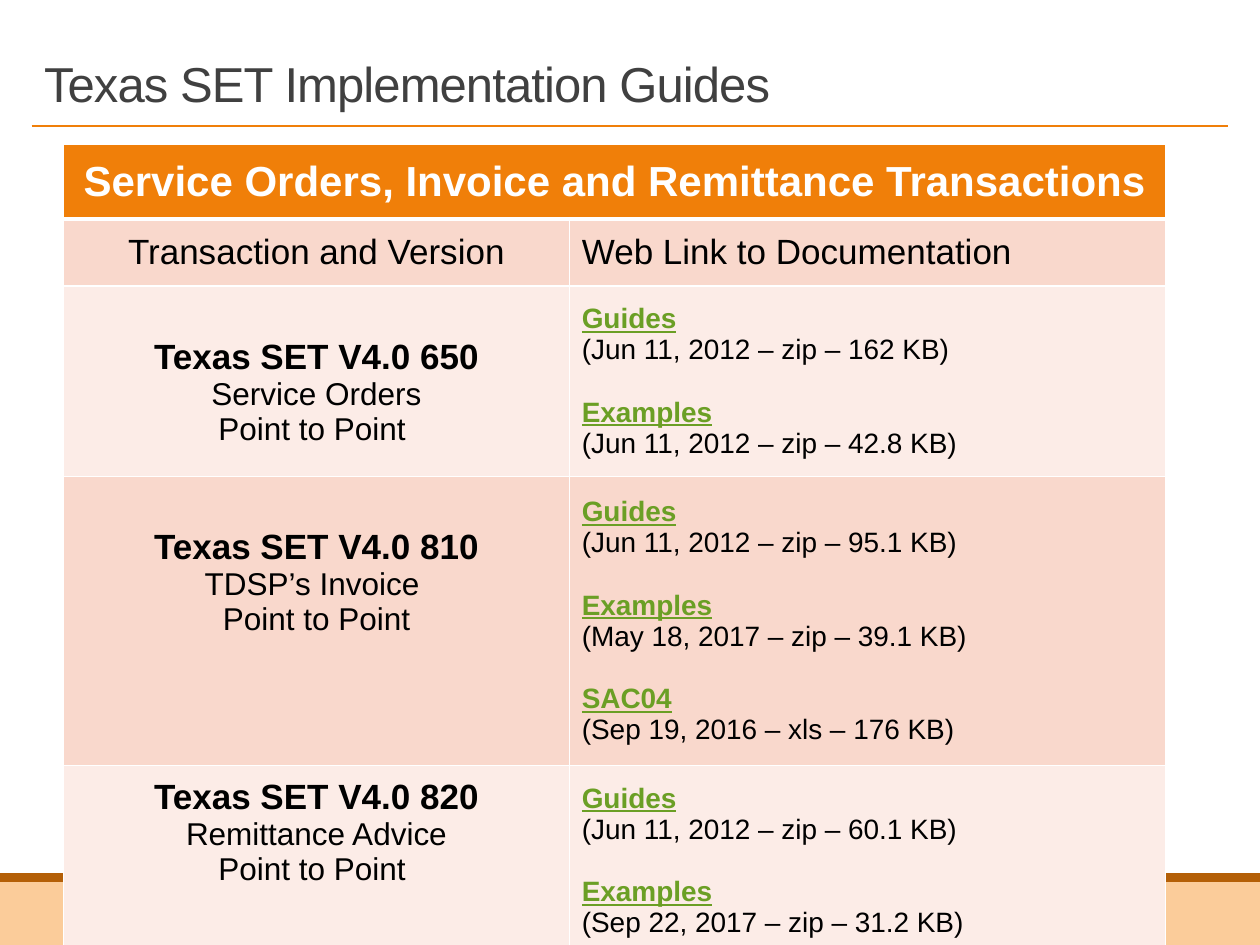
from pptx import Presentation
from pptx.dml.color import RGBColor
from pptx.enum.shapes import MSO_CONNECTOR, MSO_SHAPE
from pptx.enum.text import MSO_ANCHOR, PP_ALIGN
from pptx.oxml.ns import qn
from pptx.util import Cm, Pt
from lxml.etree import SubElement

TITLE = "Texas SET Implementation Guides"
BANNER = "Service Orders, Invoice and Remittance Transactions"
HEADINGS = ("Transaction and Version", "Web Link to Documentation")

# (name, detail lines, top margin in cm, links with their file notes)
GUIDES = [
    ("Texas SET V4.0 650", ("Service Orders", "Point to Point "), 1.04, [
        ("Guides", "(Jun 11, 2012 – zip – 162 KB)"),
        ("Examples", "(Jun 11, 2012 – zip – 42.8 KB)")]),
    ("Texas SET V4.0 810", ("TDSP’s Invoice ", "Point to Point"), 1.04, [
        ("Guides", "(Jun 11, 2012 – zip – 95.1 KB)"),
        ("Examples", "(May 18, 2017 – zip – 39.1 KB)"),
        ("SAC04", "(Sep 19, 2016 – xls – 176 KB)")]),
    ("Texas SET V4.0 820", ("Remittance Advice", "Point to Point "), 0.25, [
        ("Guides", "(Jun 11, 2012 – zip – 60.1 KB)"),
        ("Examples", "(Sep 22, 2017 – zip – 31.2 KB)")]),
]

ORANGE, DARK_ORANGE, PEACH = "F07F09", "B45F07", "FBCC9A"
BANDS = ("F9D8CC", "FCECE7")
WHITE, BLACK, GREY, GREEN = "FFFFFF", "000000", "404040", "6B9F25"
COL_WIDTHS = (10.2, 12.02)
ROW_HEIGHTS = (1.42, 1.27, 3.8, 5.49, 3.8)
LINK_GAP = 17.9


def rgb(color):
    return RGBColor.from_string(color)


def add_run(p, text, size=16, color=BLACK, bold=False, underline=False):
    r = p.add_run()
    r.text = text
    r.font.name = "Arial"
    r.font.size = Pt(size)
    r.font.bold = bold
    r.font.underline = underline
    r.font.color.rgb = rgb(color)
    return r


def next_paragraph(tf, align=PP_ALIGN.LEFT):
    """Return the first paragraph while it is empty, else a new one."""
    p = tf.paragraphs[0] if not tf.paragraphs[0].runs else tf.add_paragraph()
    p.alignment = align
    return p


def add_bar(s, top, height, color):
    sp = s.shapes.add_shape(MSO_SHAPE.RECTANGLE, 0, Cm(top), Cm(25.4), Cm(height))
    sp.shadow.inherit = False
    sp.fill.solid()
    sp.fill.fore_color.rgb = rgb(color)
    sp.line.fill.background()


def set_borders(cell, **widths):
    """Draw white borders, 1 pt unless a side (L, R, T, B) says otherwise."""
    tcPr = cell._tc.get_or_add_tcPr()
    for side in "LRTB":
        ln = SubElement(tcPr, qn("a:ln" + side), w=str(Pt(widths.get(side, 1))))
        fill = SubElement(ln, qn("a:solidFill"))
        SubElement(fill, qn("a:srgbClr"), val=WHITE)


def add_title(s):
    tb = s.shapes.add_textbox(Cm(0.64), Cm(0.64), Cm(20.96), Cm(1.75))
    tf = tb.text_frame
    tf.word_wrap = True
    tf.vertical_anchor = MSO_ANCHOR.BOTTOM
    p = next_paragraph(tf)
    p.line_spacing = 0.85
    r = add_run(p, TITLE, size=28, color=GREY)
    r._r.get_or_add_rPr().set("spc", "-50")

    rule = s.shapes.add_connector(MSO_CONNECTOR.STRAIGHT, Cm(0.64), Cm(2.54), Cm(24.76), Cm(2.54))
    rule.line.color.rgb = rgb(ORANGE)
    rule.line.width = Pt(1)
    SubElement(rule._element.spPr, qn("a:effectLst"))


def add_guide_table(s):
    table = s.shapes.add_table(len(ROW_HEIGHTS), len(COL_WIDTHS), Cm(1.28), Cm(2.9),
                               Cm(sum(COL_WIDTHS)), Cm(sum(ROW_HEIGHTS))).table
    for column, width in zip(table.columns, COL_WIDTHS):
        column.width = Cm(width)
    for i, (row, height) in enumerate(zip(table.rows, ROW_HEIGHTS)):
        row.height = Cm(height)
        for cell in row.cells:
            set_borders(cell, **{0: {"B": 3}, 1: {"T": 3}}.get(i, {}))
            cell.fill.solid()
            cell.fill.fore_color.rgb = rgb(BANDS[(i - 1) % 2] if i else ORANGE)
            cell.vertical_anchor = MSO_ANCHOR.MIDDLE
            cell.margin_left = cell.margin_right = Cm(0.25)
            cell.margin_top = cell.margin_bottom = Cm(0.25)

    banner = table.cell(0, 0)
    banner.merge(table.cell(0, 1))
    add_run(next_paragraph(banner.text_frame, PP_ALIGN.CENTER), BANNER,
            size=24, color=WHITE, bold=True)
    for col, (heading, align) in enumerate(zip(HEADINGS, (PP_ALIGN.CENTER, PP_ALIGN.LEFT))):
        add_run(next_paragraph(table.cell(1, col).text_frame, align), heading, size=20)

    for i, (name, details, top, links) in enumerate(GUIDES, start=2):
        cell = table.cell(i, 0)
        cell.vertical_anchor = MSO_ANCHOR.TOP
        cell.margin_top = Cm(top)
        add_run(next_paragraph(cell.text_frame, PP_ALIGN.CENTER), name, size=20, bold=True)
        for detail in details:
            add_run(next_paragraph(cell.text_frame, PP_ALIGN.CENTER), detail, size=18)
        for j, (link, note) in enumerate(links):
            p = next_paragraph(table.cell(i, 1).text_frame)
            if j:
                p.space_before = Pt(LINK_GAP)
            add_run(p, link, color=GREEN, bold=True, underline=True)
            p.add_line_break()
            add_run(p, note)


def main():
    prs = Presentation()
    prs.slide_width, prs.slide_height = Cm(25.4), Cm(19.05)
    s = prs.slides.add_slide(prs.slide_layouts[6])
    add_bar(s, 17.78, 1.27, PEACH)
    add_bar(s, 17.6, 0.18, DARK_ORANGE)
    add_title(s)
    add_guide_table(s)
    prs.save("out.pptx")


if __name__ == "__main__":
    main()
